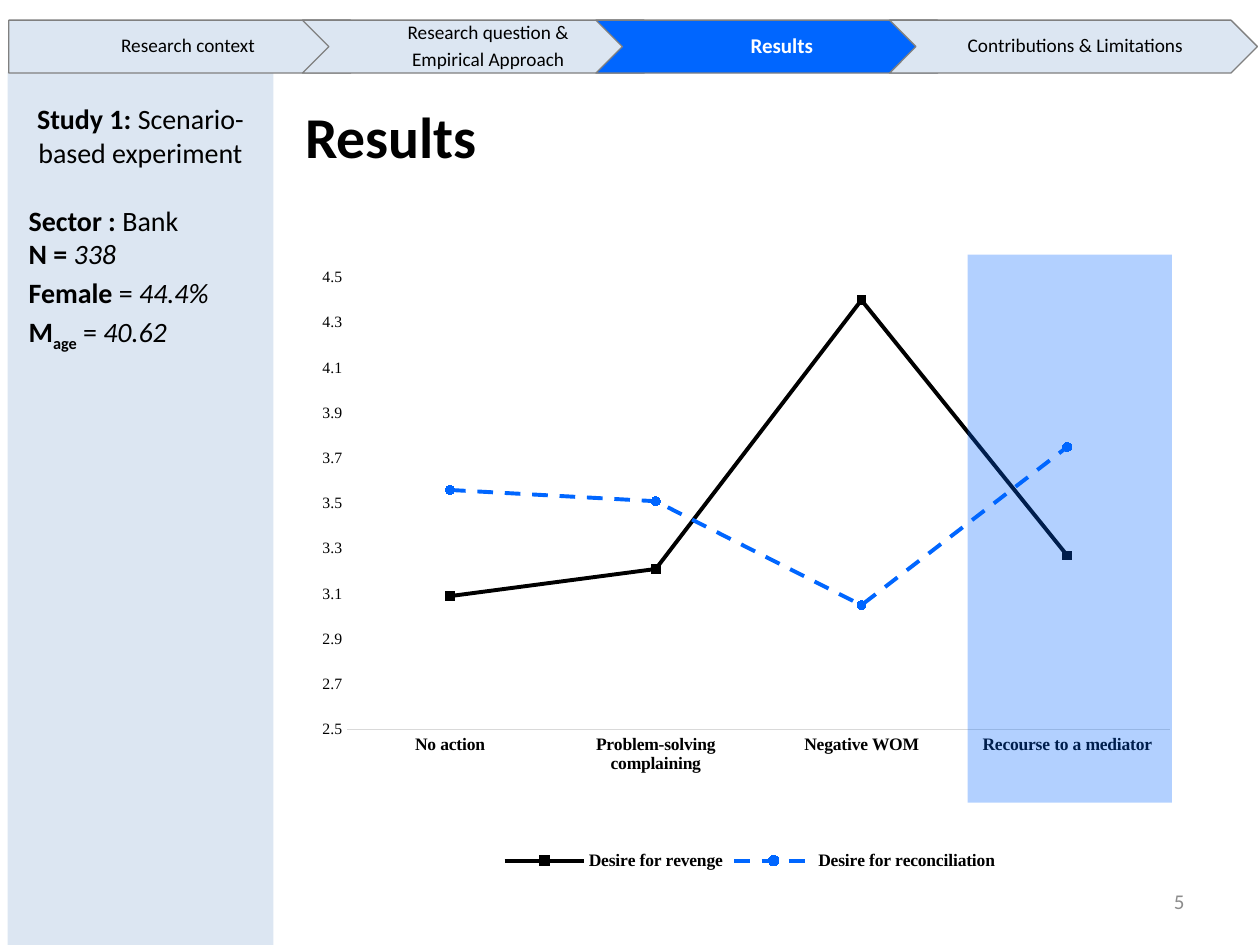
"""Build a results slide with a step bar, a study sidebar and a line chart."""
from dataclasses import dataclass
from typing import NamedTuple

from lxml import etree
from pptx import Presentation
from pptx import util as u
from pptx.chart import data as cd
from pptx.dml import color as col
from pptx.enum import chart as ch, dml, shapes, text
from pptx.oxml import ns


@dataclass(frozen=True)
class Theme:
    ink: str = "000000"
    blue: str = "0066FF"
    pale: str = "DCE6F2"
    edge: str = "808080"
    grid: str = "D9D9D9"
    mute: str = "8C8C8C"
    white: str = "FFFFFF"
    sans: str = "Calibri"
    serif: str = "Times New Roman"
    head: float = 33
    body: float = 16
    step: float = 11
    page: float = 12
    label: float = 10
    tick: float = 9


class Box(NamedTuple):
    left: float
    top: float
    width: float
    height: float

    def lens(self) -> list:
        return [u.Inches(v) for v in self]


class Step(NamedTuple):
    lines: tuple
    live: bool = False


class Bit(NamedTuple):
    text: str
    bold: bool = False
    slant: bool = False
    base: int = 0


class Fact(NamedTuple):
    bits: tuple
    space: float = 1.0
    after: float = 0
    align: int = text.PP_ALIGN.LEFT


class Line(NamedTuple):
    name: str
    vals: tuple
    tone: str
    mark: int
    dash: int


T = Theme()
MARK, DASH = ch.XL_MARKER_STYLE, dml.MSO_LINE
STEPS = (
    Step(("Research context",)),
    Step(("Research question &", "Empirical Approach")),
    Step(("Results",), True),
    Step(("Contributions & Limitations",)),
)
FACTS = (
    Fact((Bit("Study 1: ", True), Bit("Scenario- based experiment")),
         after=19.5, align=text.PP_ALIGN.CENTER),
    Fact((Bit("Sector : ", True), Bit("Bank"))),
    Fact((Bit("N = ", True), Bit("338", slant=True))),
    Fact((Bit("Female", True), Bit(" = "), Bit("44.4%", slant=True)), 1.15),
    Fact((Bit("M", True), Bit("age", True, base=-25000), Bit(" = "),
          Bit("40.62", slant=True)), 1.15),
)
CATS = ("No action", "Problem-solving complaining", "Negative WOM",
        "Recourse to a mediator")
LINES = (
    Line("Desire for revenge", (3.09, 3.21, 4.4, 3.27), T.ink,
         MARK.SQUARE, DASH.SOLID),
    Line("Desire for reconciliation", (3.56, 3.51, 3.05, 3.75), T.blue,
         MARK.CIRCLE, DASH.DASH),
)


def rgb(tone: str) -> col.RGBColor:
    return col.RGBColor.from_string(tone)


def style(font, size: float, tone: str = T.ink, bold: bool = False,
          face: str = T.sans) -> None:
    font.name, font.size, font.bold = face, u.Pt(size), bold
    font.color.rgb = rgb(tone)


def paint(fill, tone: str) -> None:
    fill.solid()
    fill.fore_color.rgb = rgb(tone)


def block(slide, kind: int, box: Box, tone: str, edge: str = ""):
    shape = slide.shapes.add_shape(kind, *box.lens())
    shape.shadow.inherit = False
    paint(shape.fill, tone)
    if edge:
        shape.line.color.rgb = rgb(edge)
        shape.line.width = u.Pt(0.75)
    else:
        shape.line.fill.background()
    return shape


def label(slide, box: Box):
    frame = slide.shapes.add_textbox(*box.lens()).text_frame
    frame.word_wrap = True
    return frame


def place(plot, spots: tuple) -> None:
    area = plot.find(ns.qn("c:layout"))
    if area is None:
        area = etree.Element(ns.qn("c:layout"))
        plot.insert(0, area)
    inner = etree.SubElement(area, ns.qn("c:manualLayout"))
    pairs = (("layoutTarget", "inner"), ("xMode", "edge"), ("yMode", "edge"),
             *zip("xywh", spots))
    for tag, val in pairs:
        etree.SubElement(inner, ns.qn(f"c:{tag}")).set("val", str(val))


def graph(slide, box: Box) -> None:
    data = cd.CategoryChartData()
    data.categories = CATS
    for line in LINES:
        data.add_series(line.name, line.vals)
    chart = slide.shapes.add_chart(
        ch.XL_CHART_TYPE.LINE_MARKERS, *box.lens(), data).chart
    style(chart.font, T.label)
    chart.has_title = False
    chart.has_legend = True
    chart.legend.position = ch.XL_LEGEND_POSITION.BOTTOM
    chart.legend.include_in_layout = False
    style(chart.legend.font, T.label, bold=True, face=T.serif)
    cat, val = chart.category_axis, chart.value_axis
    for axis in (cat, val):
        axis.major_tick_mark = axis.minor_tick_mark = ch.XL_TICK_MARK.NONE
        axis.has_major_gridlines = False
    style(cat.tick_labels.font, T.label, bold=True, face=T.serif)
    cat.format.line.color.rgb = rgb(T.grid)
    cat.format.line.width = u.Pt(0.75)
    style(val.tick_labels.font, T.tick, face=T.serif)
    val.format.line.fill.background()
    val.minimum_scale, val.maximum_scale, val.major_unit = 2.5, 4.5, 0.2
    plot = chart.plots[0]
    plot.vary_by_categories = False
    for row, line in zip(plot.series, LINES):
        row.smooth = False
        pen, mark = row.format.line, row.marker
        pen.color.rgb = rgb(line.tone)
        pen.width, pen.dash_style = u.Pt(2.25), line.dash
        mark.style, mark.size = line.mark, 5
        paint(mark.format.fill, line.tone)
        mark.format.line.color.rgb = rgb(line.tone)
    place(chart.element.find(f".//{ns.qn('c:plotArea')}"),
          (0.05, 0.14, 0.92, 0.65))


def steps(slide) -> None:
    for i, step in enumerate(STEPS):
        kind = shapes.MSO_SHAPE.CHEVRON if i else shapes.MSO_SHAPE.PENTAGON
        shape = block(slide, kind, Box(0.07 + 2.33 * i, 0.16, 2.92, 0.42),
                      T.blue if step.live else T.pale, T.edge)
        frame = shape.text_frame
        frame.margin_left, frame.margin_right = u.Inches(0.05), u.Inches(0.02)
        frame.margin_top = frame.margin_bottom = u.Inches(0.03)
        frame.vertical_anchor = text.MSO_ANCHOR.MIDDLE
        frame.text = "\n".join(step.lines)
        for para in frame.paragraphs:
            para.alignment = text.PP_ALIGN.CENTER
            para.line_spacing, para.space_after = 0.9, u.Pt(3.5)
            style(para.font, T.page if step.live else T.step,
                  T.white if step.live else T.ink, step.live)


def facts(slide, box: Box) -> None:
    frame = label(slide, box)
    for i, fact in enumerate(FACTS):
        para = frame.add_paragraph() if i else frame.paragraphs[0]
        para.alignment, para.line_spacing = fact.align, fact.space
        para.space_after = u.Pt(fact.after)
        style(para.font, T.body)
        for bit in fact.bits:
            run = para.add_run()
            run.text = bit.text
            run.font.bold, run.font.italic = bit.bold, bit.slant
            if bit.base:
                run.font._element.set("baseline", str(bit.base))


def main() -> None:
    deck = Presentation()
    deck.slide_width, deck.slide_height = u.Inches(10), u.Inches(7.5)
    slide = deck.slides.add_slide(deck.slide_layouts[5])
    title = slide.shapes.title
    title.left, title.top, title.width, title.height = Box(
        1.54, 0.58, 3.13, 0.99).lens()
    title.text_frame.text = "Results"
    title.text_frame.vertical_anchor = text.MSO_ANCHOR.MIDDLE
    para = title.text_frame.paragraphs[0]
    para.alignment = text.PP_ALIGN.CENTER
    style(para.font, T.head, bold=True)
    graph(slide, Box(2.4, 1.43, 7.1, 5.52))
    rect = shapes.MSO_SHAPE.RECTANGLE
    band = block(slide, rect, Box(7.68, 2.02, 1.62, 4.35), T.blue)
    tone = band.element.spPr.find(f".//{ns.qn('a:srgbClr')}")
    etree.SubElement(tone, ns.qn("a:alpha")).set("val", "30000")
    page = label(slide, Box(7.17, 6.95, 2.33, 0.4))
    page.vertical_anchor = text.MSO_ANCHOR.MIDDLE
    page.text = "5"
    page.paragraphs[0].alignment = text.PP_ALIGN.RIGHT
    style(page.paragraphs[0].font, T.page, T.mute)
    block(slide, rect, Box(0.06, 0.57, 2.11, 6.93), T.pale)
    facts(slide, Box(0.13, 0.76, 1.97, 2.61))
    steps(slide)
    deck.save("out.pptx")


if __name__ == "__main__":
    main()
